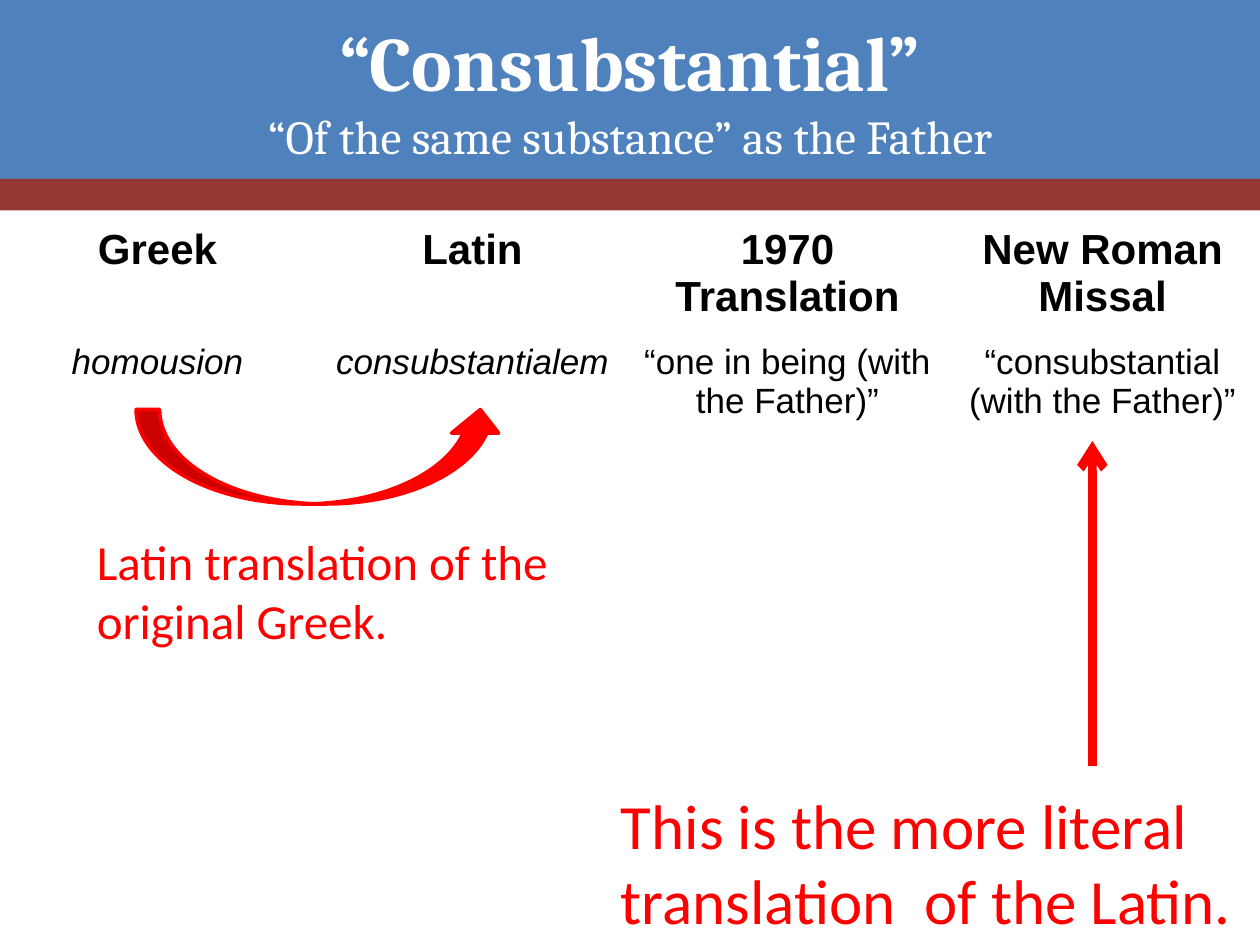
import pptx
import pptx.dml.color
import pptx.enum.shapes
import pptx.enum.text
import pptx.oxml.ns
import pptx.util
from lxml import etree
from pptx.util import Inches

COLORS = {
    "banner": "4F81BD",
    "stripe": "953735",
    "title": "FFFFFF",
    "table": "000000",
    "note": "FF0000",
}
SHAPE = pptx.enum.shapes.MSO_SHAPE
CENTER = pptx.enum.text.PP_ALIGN.CENTER


def color(key):
    return pptx.dml.color.RGBColor.from_string(COLORS[key])


def add_run(paragraph, text, font, size, color_key, bold=False, italic=False):
    run = paragraph.add_run()
    run.text = text
    run.font.name = font
    run.font.size = pptx.util.Pt(size)
    run.font.color.rgb = color(color_key)
    run.font.bold = bold
    run.font.italic = italic


def add_filled_shape(slide, preset, box, color_key, line_width=None):
    shape = slide.shapes.add_shape(preset, *map(Inches, box))
    shape.shadow.inherit = False
    shape.fill.solid()
    shape.fill.fore_color.rgb = color(color_key)
    if line_width:
        shape.line.color.rgb = color(color_key)
        shape.line.width = pptx.util.Pt(line_width)
    else:
        shape.line.fill.background()


def add_text_frame(slide, box):
    frame = slide.shapes.add_textbox(*map(Inches, box)).text_frame
    frame.word_wrap = True
    return frame


def add_title(slide, word, meaning):
    frame = add_text_frame(slide, (0.5, 0, 9, 1.42))
    frame.vertical_anchor = pptx.enum.text.MSO_ANCHOR.MIDDLE
    heading = frame.paragraphs[0]
    heading.alignment = CENTER
    add_run(heading, word, "Cambria", 44, "title", bold=True)
    heading.add_line_break()
    add_run(heading, meaning, "Cambria", 27, "title")


def add_note(slide, box, text, size):
    frame = add_text_frame(slide, box)
    add_run(frame.paragraphs[0], text, "Calibri", size, "note")


def add_translation_table(slide, columns):
    table = slide.shapes.add_table(
        2, len(columns), Inches(0), Inches(1.75), Inches(10), Inches(1.84)
    ).table
    table.first_row = False
    table.horz_banding = False
    for col, (language, term, italic) in enumerate(columns):
        heading_style = {"size": 24, "bold": True}
        term_style = {"size": 20, "italic": italic}
        for row, (text, style) in enumerate(
            [(language, heading_style), (term, term_style)]
        ):
            cell = table.cell(row, col)
            cell.fill.background()
            paragraph = cell.text_frame.paragraphs[0]
            paragraph.alignment = CENTER
            add_run(paragraph, text, "Arial", color_key="table", **style)


def add_arrow(slide, start, end, width):
    arrow = slide.shapes.add_connector(
        pptx.enum.shapes.MSO_CONNECTOR.STRAIGHT, *map(Inches, start + end)
    )
    arrow.line.color.rgb = color("note")
    arrow.line.width = pptx.util.Pt(width)
    # Arrowhead at the end, and no theme shadow
    qn = pptx.oxml.ns.qn
    etree.SubElement(arrow.line._get_or_add_ln(), qn("a:tailEnd"), type="arrow")
    etree.SubElement(arrow._element.spPr, qn("a:effectLst"))


def main():
    deck = pptx.Presentation()
    deck.slide_width = Inches(10)
    deck.slide_height = Inches(7.5)
    slide = deck.slides.add_slide(deck.slide_layouts[6])

    # Title banner
    add_filled_shape(slide, SHAPE.RECTANGLE, (0, 0, 10, 1.42), "banner")
    add_filled_shape(slide, SHAPE.RECTANGLE, (0, 1.42, 10, 0.25), "stripe")
    add_title(slide, "“Consubstantial”", "“Of the same substance” as the Father")

    # Language, term, italic term
    add_translation_table(slide, [
        ("Greek", "homousion", True),
        ("Latin", "consubstantialem", True),
        ("1970 Translation", "“one in being (with the Father)”", False),
        ("New Roman Missal", "“consubstantial (with the Father)”", False),
    ])

    # Notes with their arrows
    add_note(slide, (0.67, 4.17, 4.08, 1.04),
             "Latin translation of the original Greek.", 28)
    add_arrow(slide, (8.67, 6.08), (8.67, 3.5), 5)
    add_note(slide, (4.83, 6.19, 5.17, 1.31),
             "This is the more literal translation  of the Latin.", 36)
    add_filled_shape(slide, SHAPE.CURVED_UP_ARROW, (1.08, 3.25, 2.92, 0.75),
                     "note", line_width=2)

    deck.save("out.pptx")


if __name__ == "__main__":
    main()
